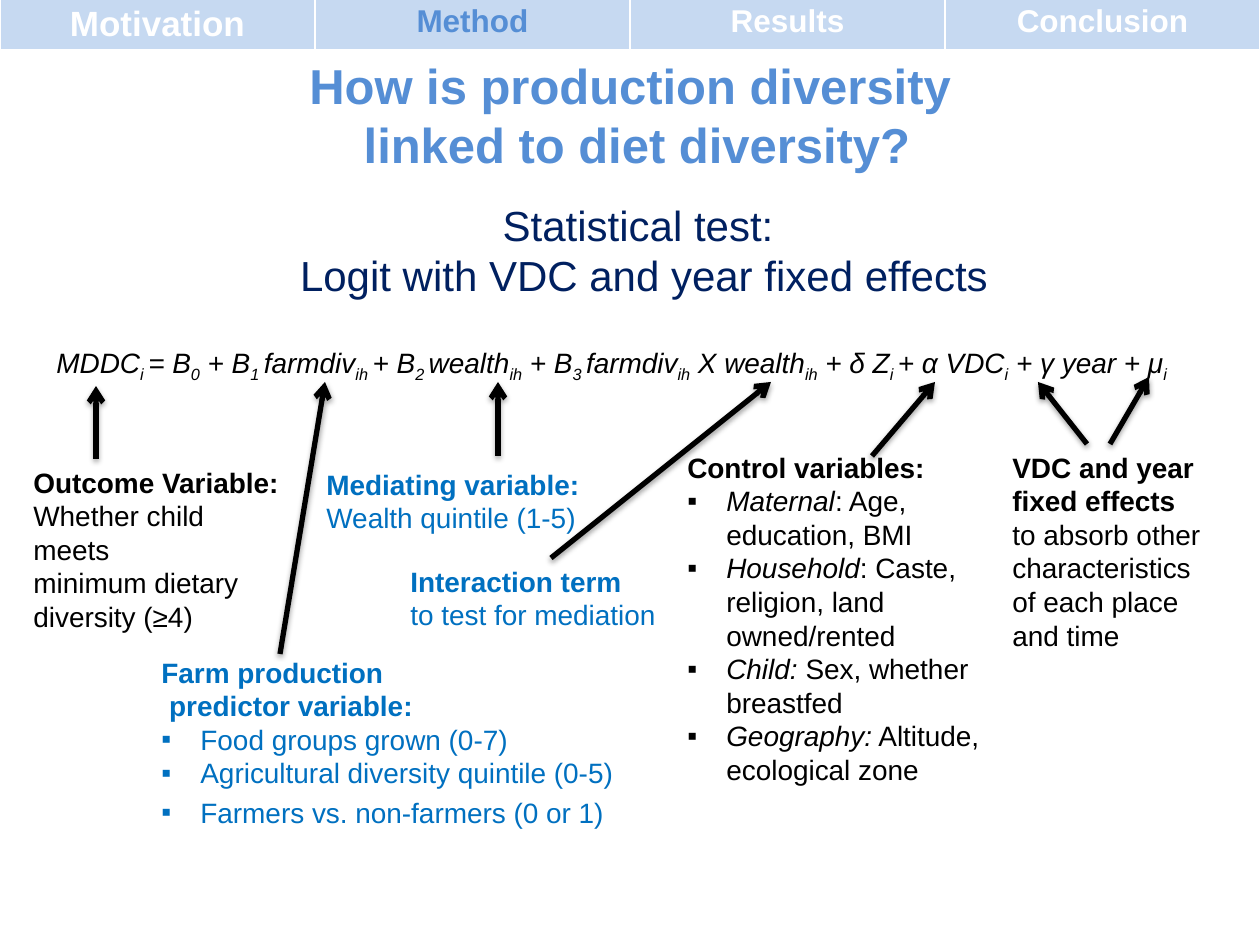
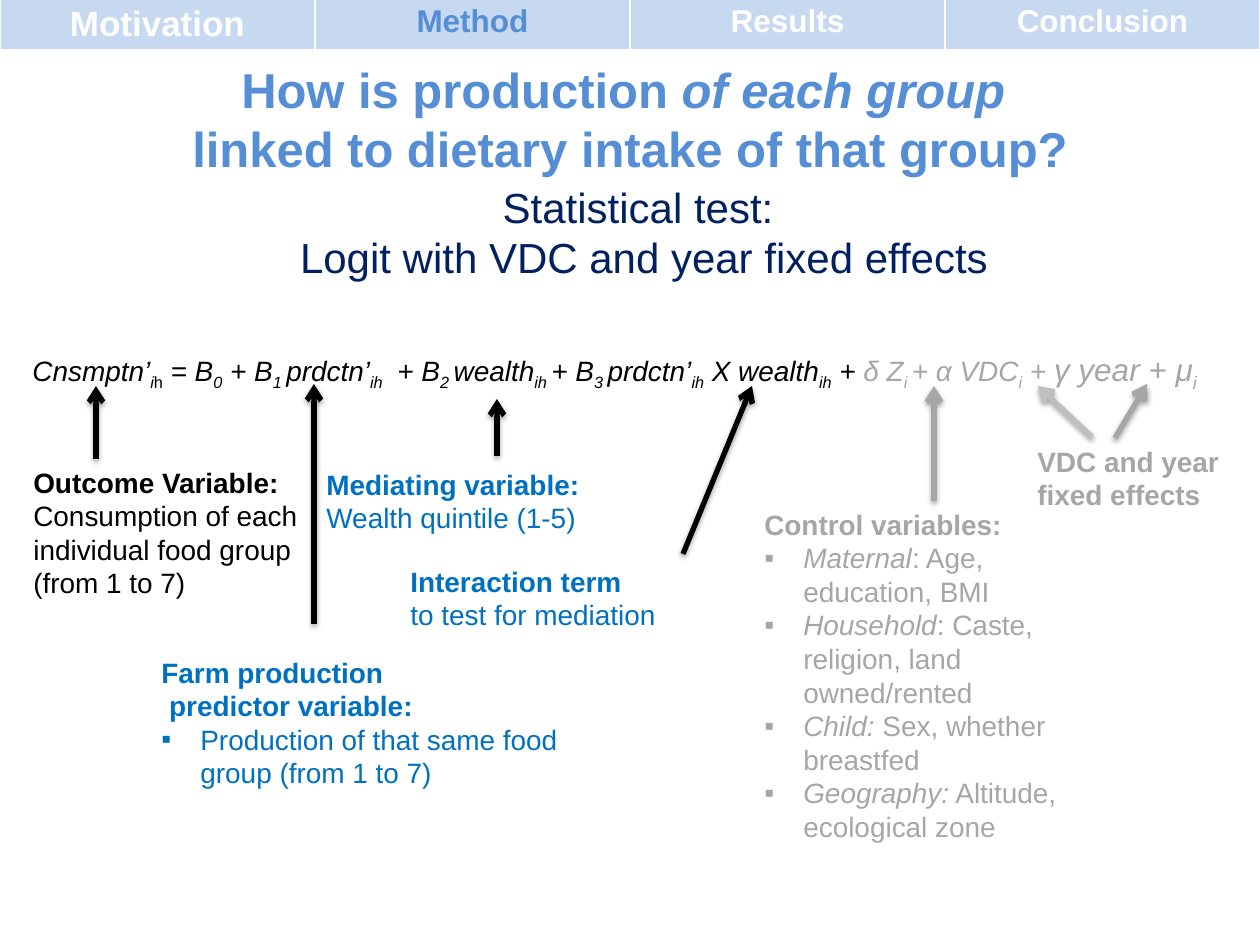
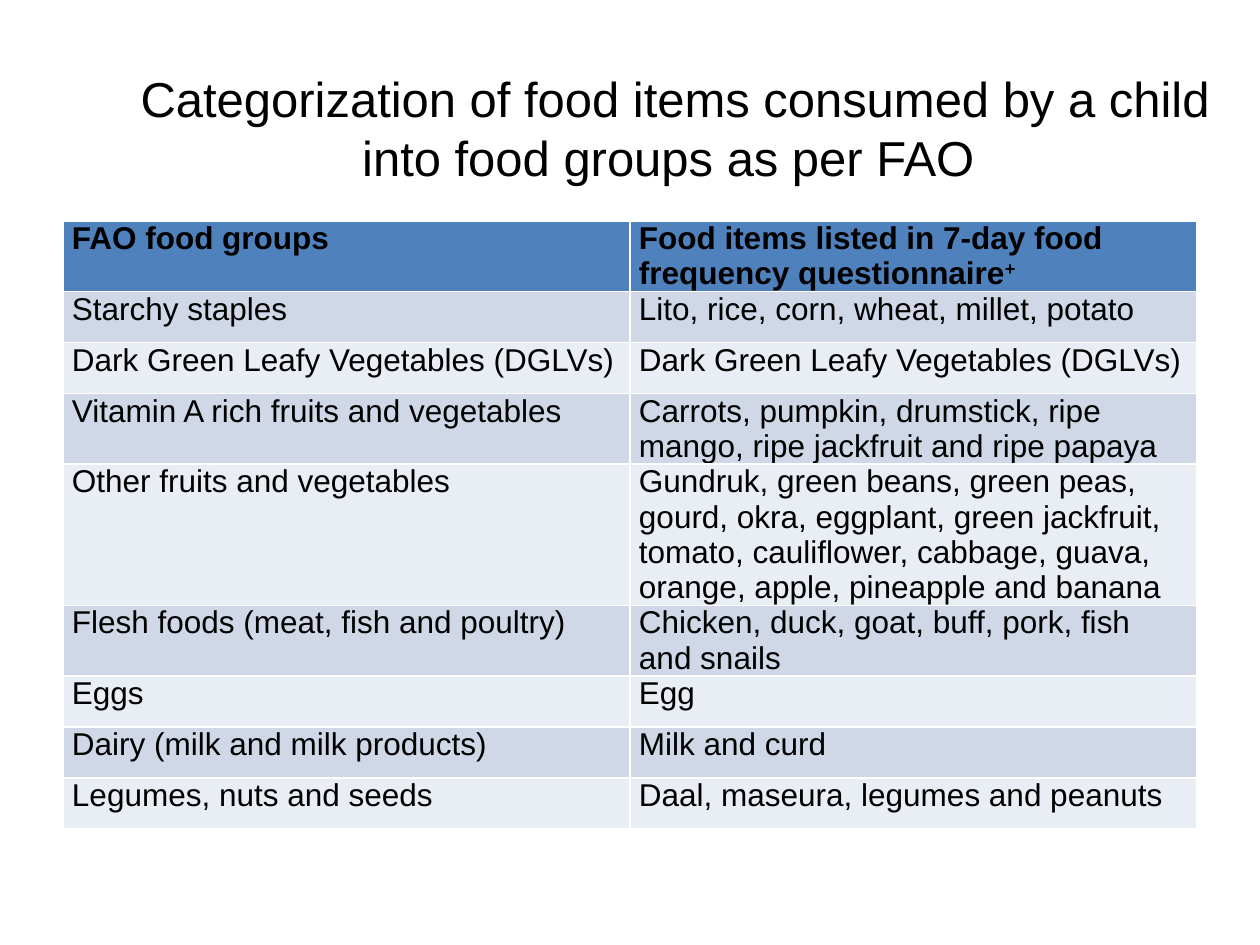
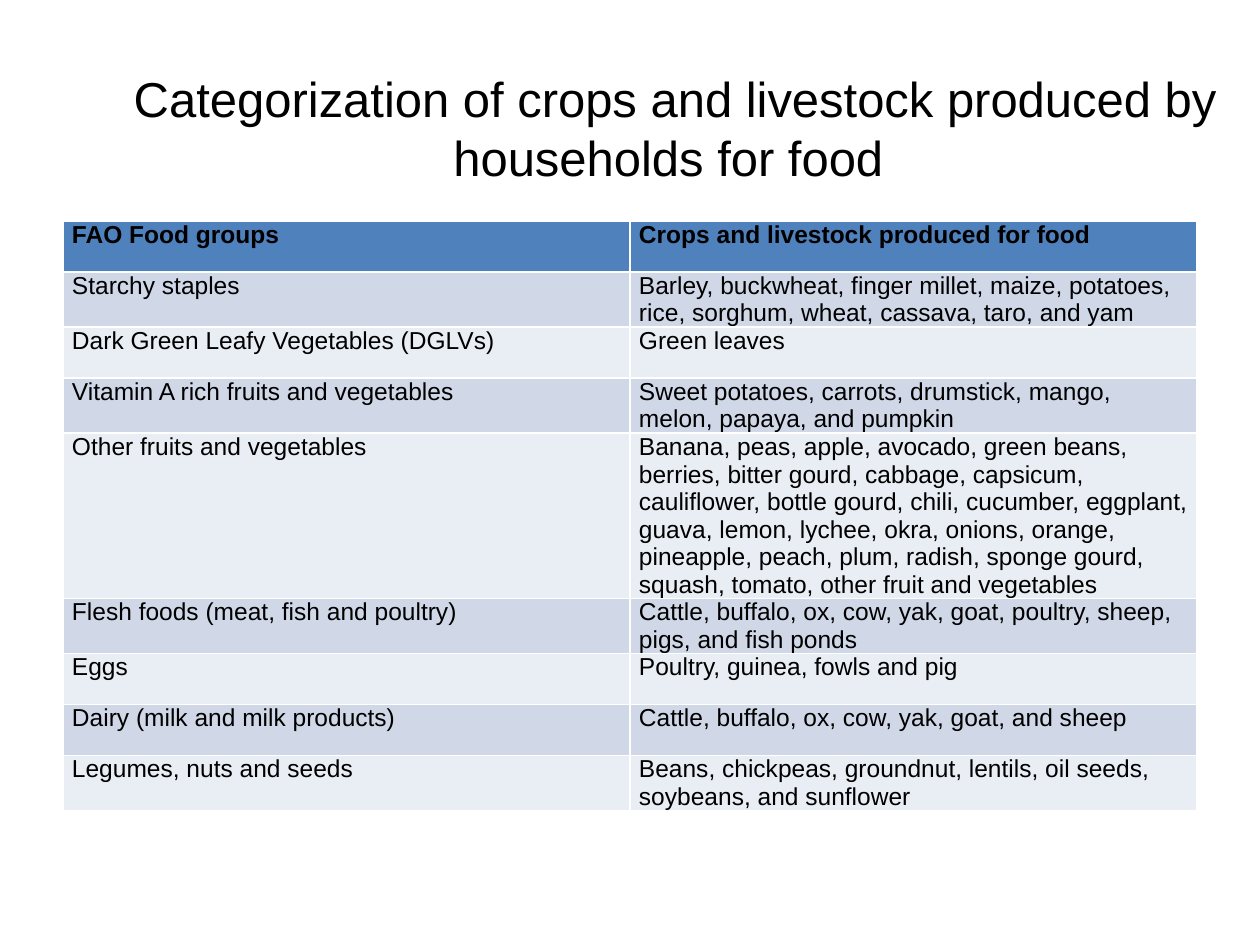
import pptx
import pptx.dml.color
import pptx.enum.shapes
import pptx.enum.text
import pptx.oxml
import pptx.oxml.ns
import pptx.util

ALIGN = pptx.enum.text.PP_ALIGN
ANCHOR = pptx.enum.text.MSO_ANCHOR
NS = pptx.oxml.ns.nsdecls("a")

WIDTH, HEIGHT = 1260, 945
PX = 914400 / 126

FONT = "Arial"
BLACK, WHITE, GREY, LIGHT_GREY = "000000", "FFFFFF", "A6A6A6", "BFBFBF"
HEADING, NAVY, BLUE = "558ED5", "002060", "0070C0"
NAV_FILL, HEADER_FILL, BANDS = "C6D9F1", "4F81BD", ("D0D8E8", "E9EDF4")

SECTIONS = ["Motivation", "Method", "Results", "Conclusion"]
MARKS = {"#": "bold", "*": "italic", "~": "sub", "^": "sup"}
BULLET = "▪"
BULLET_INDENT = 39

SHADOW = (f'<a:effectLst {NS}><a:outerShdw blurRad="40000" dist="20000" dir="5400000" '
          'rotWithShape="0"><a:srgbClr val="000000"><a:alpha val="38000"/></a:srgbClr>'
          '</a:outerShdw></a:effectLst>')


def px(n):
    return pptx.util.Emu(round(n * PX))


def rgb(color):
    return pptx.dml.color.RGBColor.from_string(color)


def add_text(p, text, **fmt):
    """Add runs to p; each pair of marks in the text toggles one format."""
    for mark, key in MARKS.items():
        if mark in text:
            for i, bit in enumerate(text.split(mark)):
                add_text(p, bit, **{**fmt, key: fmt.get(key, False) != bool(i % 2)})
            return
    if not text:
        return
    r = p.add_run()
    r.text = text
    r.font.name = FONT
    r.font.size = pptx.util.Pt(fmt.get("size", 16))
    r.font.color.rgb = rgb(fmt.get("color", BLACK))
    r.font.bold = fmt.get("bold", False)
    r.font.italic = fmt.get("italic", False)
    rPr = r.font._element
    if fmt.get("sub") or fmt.get("sup"):
        rPr.set("baseline", "-25000" if fmt.get("sub") else "30000")
    if "spacing" in fmt:
        rPr.set("spc", str(fmt["spacing"] * 100))


def add_bullet(p):
    pPr = p._p.get_or_add_pPr()
    pPr.set("marL", str(px(BULLET_INDENT)))
    pPr.set("indent", str(-px(BULLET_INDENT)))
    for xml in (f'<a:buFont {NS} typeface="{FONT}"/>', f'<a:buChar {NS} char="{BULLET}"/>'):
        pPr.append(pptx.oxml.parse_xml(xml))


def write(tf, paras, align=ALIGN.LEFT, **fmt):
    """Fill a text frame; a paragraph is a string or a (string, points before) pair."""
    for i, para in enumerate(paras):
        text, before = para if isinstance(para, tuple) else (para, 0)
        p = tf.paragraphs[0] if i == 0 else tf.add_paragraph()
        p.alignment = align
        p.space_before = pptx.util.Pt(before)
        if text.startswith(BULLET):
            add_bullet(p)
        add_text(p, text.removeprefix(BULLET), **fmt)


class Deck:
    def __init__(self):
        self.prs = pptx.Presentation()
        self.prs.slide_width, self.prs.slide_height = px(WIDTH), px(HEIGHT)
        self.slide = None

    def new_slide(self, title, box, **fmt):
        self.slide = self.prs.slides.add_slide(self.prs.slide_layouts[5])
        sp = self.slide.shapes.title
        sp.left, sp.top, sp.width, sp.height = map(px, box)
        tf = sp.text_frame
        tf.auto_size = pptx.enum.text.MSO_AUTO_SIZE.NONE
        tf.vertical_anchor = ANCHOR.MIDDLE
        write(tf, title, align=ALIGN.CENTER, size=28, **fmt)

    def text(self, x, y, w, h, paras, anchor=ANCHOR.TOP, **fmt):
        tf = self.slide.shapes.add_textbox(px(x), px(y), px(w), px(h)).text_frame
        tf.word_wrap = True
        tf.vertical_anchor = anchor
        write(tf, paras, **fmt)
        return tf

    def formula(self, x, y, pieces):
        """Place one line of (text, format) pieces, italic by default."""
        p = self.text(x, y, WIDTH - x, 64, [""]).paragraphs[0]
        for text, fmt in pieces:
            add_text(p, text, italic=True, **fmt)

    def arrow(self, x1, y1, x2, y2, color=BLACK):
        cx = self.slide.shapes.add_connector(
            pptx.enum.shapes.MSO_CONNECTOR.STRAIGHT, px(x1), px(y1), px(x2), px(y2))
        cx.line.color.rgb = rgb(color)
        cx.line.width = pptx.util.Pt(3)
        cx.line._get_or_add_ln().append(pptx.oxml.parse_xml(f'<a:tailEnd {NS} type="arrow"/>'))
        cx._element.spPr.append(pptx.oxml.parse_xml(SHADOW))

    def table(self, x, y, w, rows, cols, row_h=51):
        frame = self.slide.shapes.add_table(rows, cols, px(x), px(y), px(w), px(row_h * rows))
        return frame.table

    def cell(self, cell, text, fill, **fmt):
        cell.fill.solid()
        cell.fill.fore_color.rgb = rgb(fill)
        write(cell.text_frame, [text], **fmt)

    def nav(self, current):
        table = self.table(0, -2, WIDTH, 1, len(SECTIONS))
        for i, name in enumerate(SECTIONS):
            self.cell(table.cell(0, i), name, NAV_FILL, align=ALIGN.CENTER, bold=True,
                      size=20 if i == 0 else 18, color=HEADING if name == current else WHITE)

    def model_slide(self, title, title_box, test_y):
        """Start a slide with the parts that both regression models share."""
        self.new_slide(title, title_box, bold=True, color=HEADING)
        self.nav("Method")
        self.text(14, test_y, WIDTH, 115,
                  ["Statistical test: ", "Logit with VDC and year fixed effects"],
                  anchor=ANCHOR.MIDDLE, align=ALIGN.CENTER, size=24, color=NAVY)
        self.text(314, 461, 306, 116, ["#Mediating variable:#", "Wealth quintile (1-5)"],
                  color=BLUE)
        self.text(398, 558, 272, 87, ["#Interaction term#", "to test for mediation"], color=BLUE)
        self.arrow(96, 459, 96, 386)

    def outcome(self, w, paras):
        self.text(21, 459, w, 195, ["#Outcome Variable:#", *paras])

    def predictor(self, bullets):
        self.text(149, 649, 485, 156,
                  ["#Farm production#", "# predictor variable:#", *bullets], color=BLUE)

    def controls(self, x, y, color):
        self.text(x, y, 340, 421,
                  ["#Control variables:#", "▪*Maternal*: Age, education, BMI",
                   "▪*Household*: Caste, religion, land owned/rented",
                   "▪*Child: *Sex, whether breastfed",
                   "▪*Geography:* Altitude, ecological zone"], color=color)

    def food_slide(self, title, size, rows):
        self.new_slide([title], (108, 33, 1134, 188))
        table = self.table(63, 221, 1134, len(rows), 2)
        for i, row in enumerate(rows):
            for j, text in enumerate(row):
                cell = table.cell(i, j)
                cell.margin_left = cell.margin_right = px(9)
                cell.margin_top = cell.margin_bottom = 0
                self.cell(cell, text, BANDS[(i - 1) % 2] if i else HEADER_FILL,
                          size=size, bold=i == 0)


def diversity_model(deck):
    deck.model_slide(["How is production diversity ", "linked to diet diversity?"],
                     (21, 57, 1232, 115), 192)
    deck.formula(44, 339, [(
        "MDDC~i ~= B~0~ + B~1 ~farmdiv~ih ~+ B~2 ~wealth~ih~ + B~3 ~farmdiv~ih~"
        " X wealth~ih~ + δ Z~i ~+ α VDC~i~ + γ year + μ~i~", {})])
    deck.outcome(272, ["Whether child meets", "minimum dietary diversity (≥4)"])
    deck.predictor(["▪Food groups grown (0-7)", "▪Agricultural diversity quintile (0-5)",
                    ("▪Farmers vs. non-farmers (0 or 1)", 3.5)])
    deck.controls(675, 444, BLACK)
    deck.text(1000, 444, 218, 204, ["#VDC and year fixed effects#",
                                    "to absorb other characteristics of each place and time"])
    for ends in [(280, 654, 325, 382), (551, 558, 771, 382), (1110, 444, 1149, 377),
                 (498, 456, 498, 382), (1087, 444, 1038, 382), (872, 456, 935, 382)]:
        deck.arrow(*ends)


def group_model(deck):
    deck.model_slide(["How is production *of each group *",
                      "linked to dietary intake of that group?"], (14, 61, 1232, 115), 174)
    deck.formula(20, 344, [
        ("Cnsmptn’~i~*~h~* = B~0~ + B~1 ~prdctn’~ih~", {}), (" ", {"spacing": 4}),
        ("+ B~2 ~wealth~ih ~+ B~3 ~prdctn’~ih~ X wealth~ih~ + ", {}),
        ("δ Z~i ~+ α VDC~i~ + ", {"color": GREY}),
        ("γ year + μ~i~", {"color": GREY, "size": 18})])
    deck.outcome(292, ["Consumption of each individual food group (from 1 to 7)"])
    deck.predictor(["▪Production of that same food group (from 1 to 7)"])
    deck.controls(752, 501, GREY)
    deck.text(1025, 438, 218, 58, ["#VDC and year fixed effects#"], color=GREY)
    for *ends, color in [(314, 624, 314, 384, BLACK), (683, 554, 752, 386, BLACK),
                         (497, 456, 497, 399, BLACK), (1115, 438, 1147, 384, GREY),
                         (1092, 437, 1038, 386, LIGHT_GREY), (934, 501, 934, 386, GREY)]:
        deck.arrow(*ends, color)


CONSUMED = [
    ("FAO food groups", "Food items listed in 7-day food frequency questionnaire^+^"),
    ("Starchy staples", "Lito, rice, corn, wheat, millet, potato"),
    ("Dark Green Leafy Vegetables (DGLVs)", "Dark Green Leafy Vegetables (DGLVs)"),
    ("Vitamin A rich fruits and vegetables",
     "Carrots, pumpkin, drumstick, ripe mango, ripe jackfruit and ripe papaya"),
    ("Other fruits and vegetables",
     "Gundruk, green beans, green peas, gourd, okra, eggplant, green jackfruit, tomato, "
     "cauliflower, cabbage, guava, orange, apple, pineapple and banana"),
    ("Flesh foods (meat, fish and poultry)", "Chicken, duck, goat, buff, pork, fish and snails"),
    ("Eggs", "Egg"),
    ("Dairy (milk and milk products)", "Milk and curd"),
    ("Legumes, nuts and seeds", "Daal, maseura, legumes and peanuts"),
]
PRODUCED_HEADER = ("FAO Food groups", "Crops and livestock produced for food")
PRODUCED_ITEMS = [
    "Barley, buckwheat, finger millet, maize, potatoes, rice, sorghum, wheat, cassava, taro, "
    "and yam",
    "Green leaves",
    "Sweet potatoes, carrots, drumstick, mango, melon, papaya, and pumpkin",
    "Banana, peas, apple, avocado, green beans, berries, bitter gourd, cabbage, capsicum, "
    "cauliflower, bottle gourd, chili, cucumber, eggplant, guava, lemon, lychee, okra, onions, "
    "orange, pineapple, peach, plum, radish, sponge gourd, squash, tomato, other fruit and "
    "vegetables",
    "Cattle, buffalo, ox, cow, yak, goat, poultry, sheep, pigs, and fish ponds",
    "Poultry, guinea, fowls and pig",
    "Cattle, buffalo, ox, cow, yak, goat, and sheep",
    "Beans, chickpeas, groundnut, lentils, oil seeds, soybeans, and sunflower",
]


def main():
    deck = Deck()
    diversity_model(deck)
    group_model(deck)
    deck.food_slide("Categorization of food items consumed by a child into food groups "
                    "as per FAO ", 18, CONSUMED)
    groups = [group for group, _ in CONSUMED[1:]]
    deck.food_slide("Categorization of crops and livestock produced by households for food ",
                    14, [PRODUCED_HEADER, *zip(groups, PRODUCED_ITEMS)])
    deck.prs.save("out.pptx")


if __name__ == "__main__":
    main()
